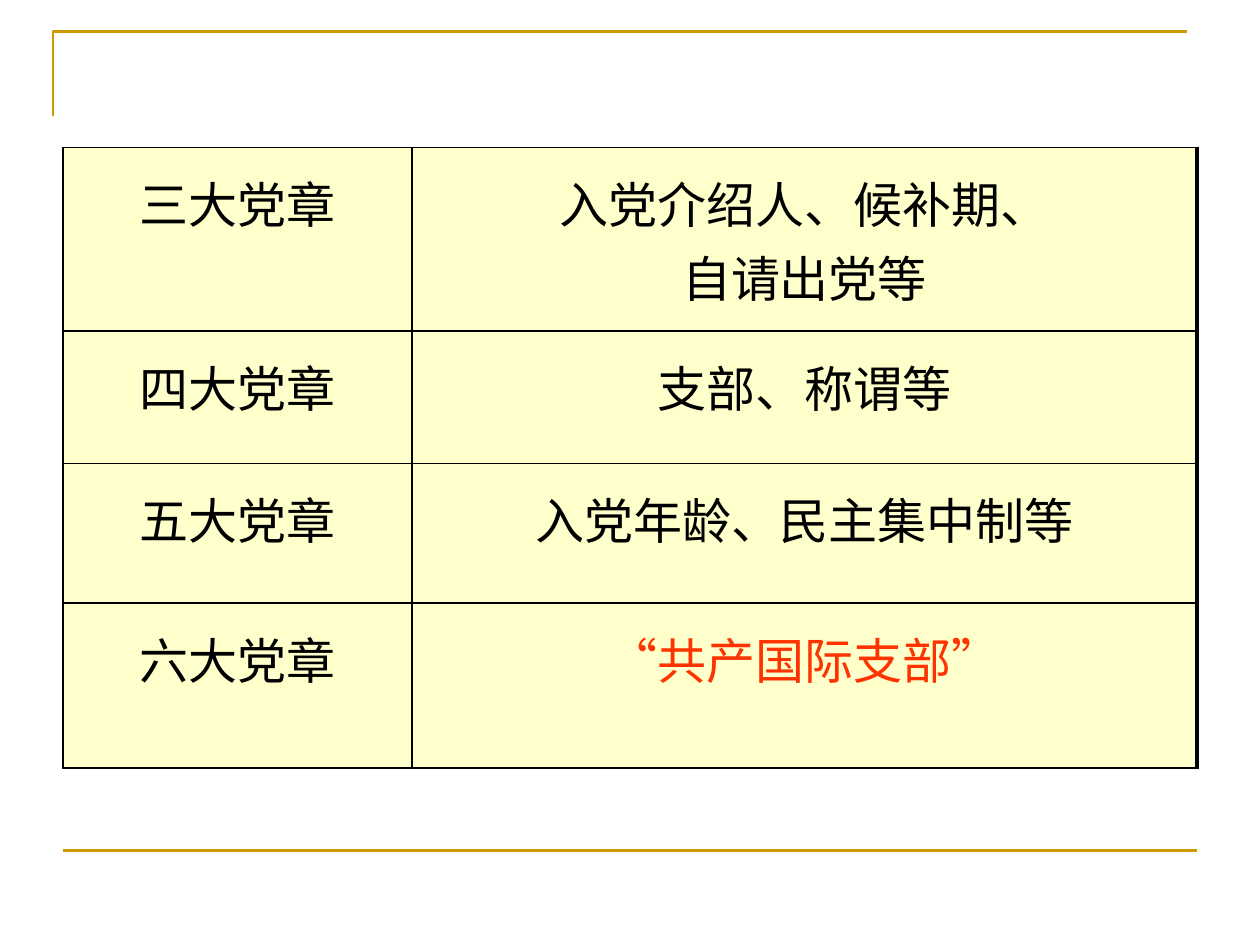
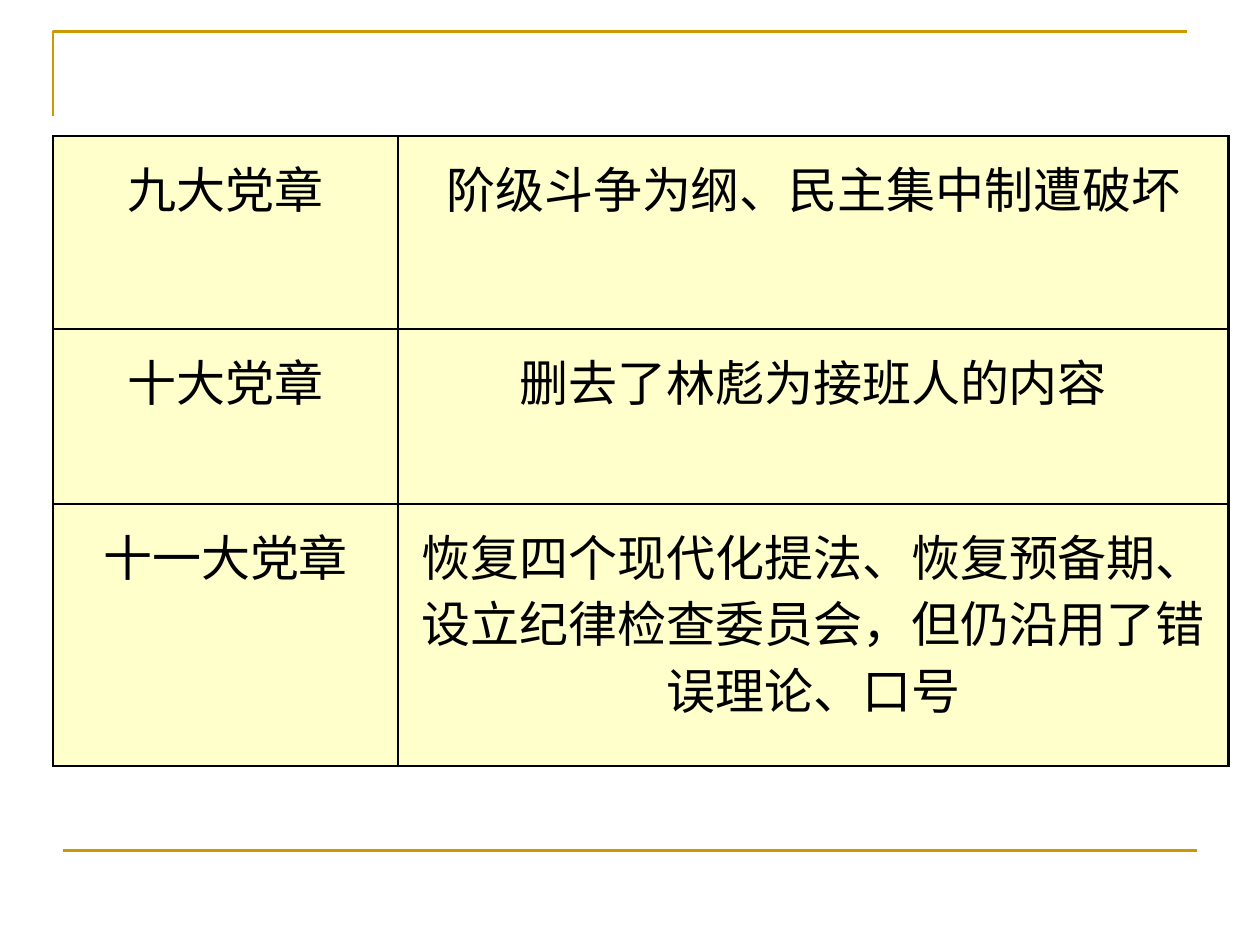
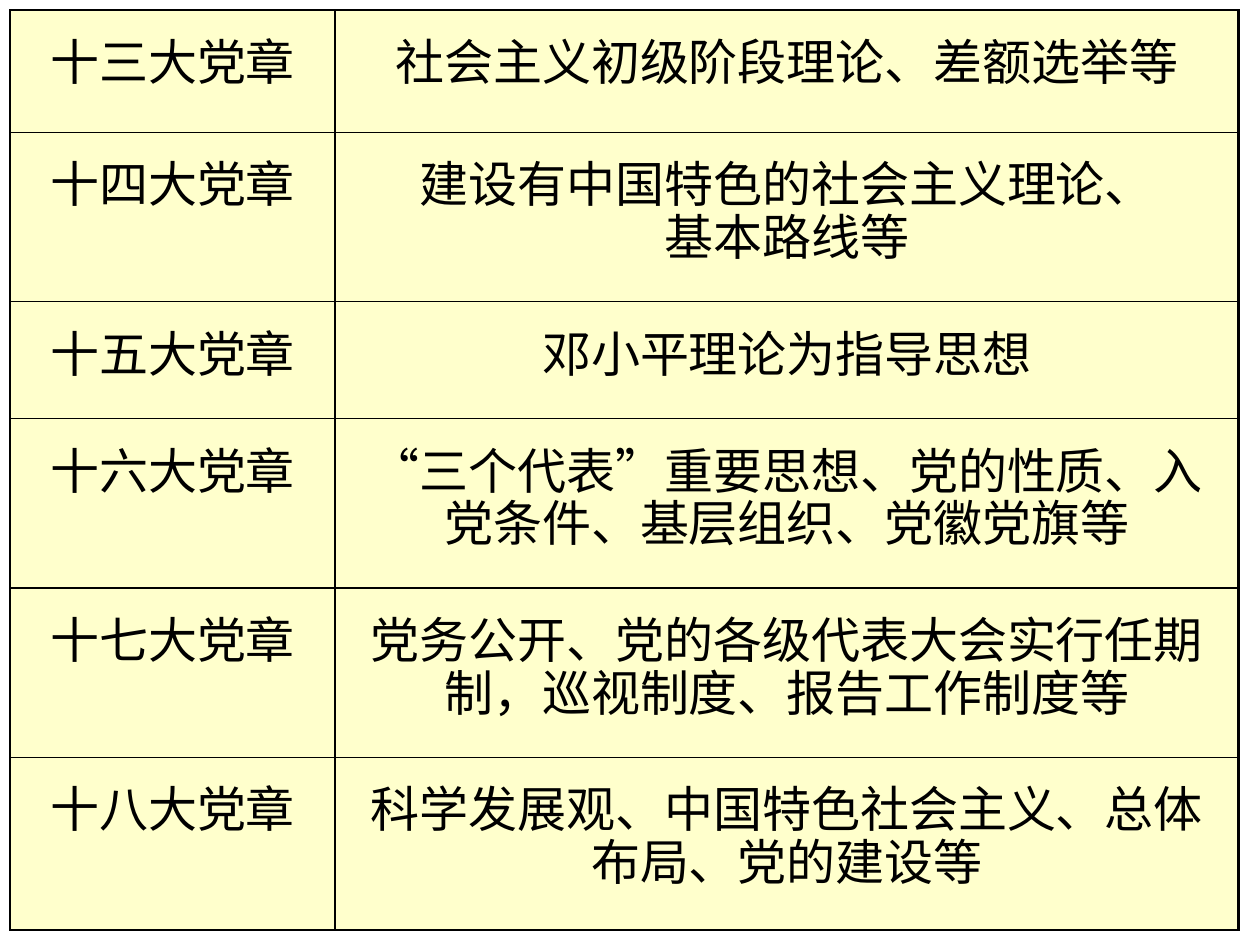
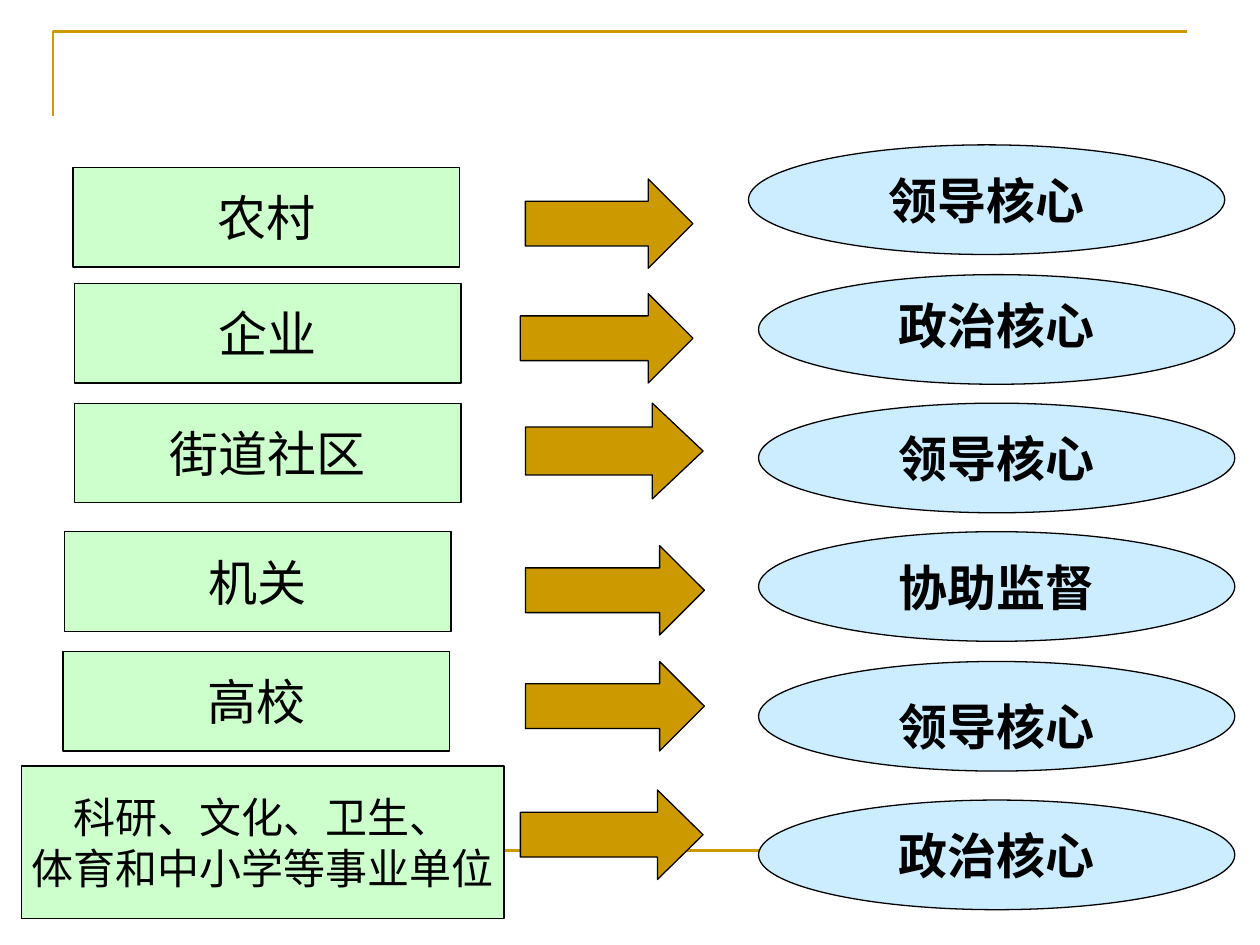
from dataclasses import dataclass

from lxml import etree
from pptx import Presentation
from pptx.dml.color import RGBColor
from pptx.enum.shapes import MSO_CONNECTOR, MSO_SHAPE
from pptx.enum.text import MSO_ANCHOR, PP_ALIGN
from pptx.oxml.ns import qn
from pptx.util import Inches, Pt

CENTER = PP_ALIGN.CENTER
MIDDLE = MSO_ANCHOR.MIDDLE
RECT = MSO_SHAPE.RECTANGLE
OVAL = MSO_SHAPE.OVAL
ARROW = MSO_SHAPE.RIGHT_ARROW
STRAIGHT = MSO_CONNECTOR.STRAIGHT


@dataclass(frozen=True)
class Theme:
    gold: RGBColor = RGBColor.from_string("CC9900")
    cream: RGBColor = RGBColor.from_string("FFFFCC")
    green: RGBColor = RGBColor.from_string("CCFFCC")
    blue: RGBColor = RGBColor.from_string("CCECFF")
    black: RGBColor = RGBColor.from_string("000000")
    red: RGBColor = RGBColor.from_string("FF3300")
    cjk: str = "Noto Sans CJK SC"
    latin: str = "Times New Roman"
    body: int = 28
    small: int = 24
    rule: float = 1.5
    outline: float = 0.75
    border: float = 1
    edge: float = 2.25


T = Theme()


def style_text(tf, font, size, color=T.black, bold=False):
    for p in tf.paragraphs:
        p.alignment = CENTER
        p.font.name = font
        p.font.size = Pt(size)
        p.font.bold = bold
        p.font.color.rgb = color
        latin = p._p.pPr.find(qn("a:defRPr")).find(qn("a:latin"))
        ea = etree.Element(qn("a:ea"), typeface=T.cjk)
        latin.addnext(ea)


def add_block(s, kind, box, fill):
    sp = s.shapes.add_shape(kind, *map(Inches, box))
    sp.shadow.inherit = False
    sp.fill.solid()
    sp.fill.fore_color.rgb = fill
    sp.line.color.rgb = T.black
    sp.line.width = Pt(T.outline)
    return sp


TABLES = [
    dict(
        at=(0.5, 1.17), cols=(2.77, 6.23), inset_pt=11.3, before=1.4, spacing=None,
        rows=[
            (1.45, "三大党章", "入党介绍人、候补期、\n自请出党等"),
            (1.05, "四大党章", "支部、称谓等"),
            (1.11, "五大党章", "入党年龄、民主集中制等"),
            (1.31, "六大党章", "“共产国际支部”"),
        ],
    ),
    dict(
        at=(0.42, 1.08), cols=(2.74, 6.59), inset_pt=11.5, before=0, spacing=38,
        rows=[
            (1.53, "九大党章", "阶级斗争为纲、民主集中制遭破坏"),
            (1.39, "十大党章", "删去了林彪为接班人的内容"),
            (2.08, "十一大党章",
             "恢复四个现代化提法、恢复预备期、设立纪律检查委员会，但仍沿用了错误理论、口号"),
        ],
    ),
    dict(
        at=(0.08, 0.08), cols=(2.58, 7.17), inset_pt=18.4, before=0, spacing=30,
        rows=[
            (0.97, "十三大党章", "社会主义初级阶段理论、差额选举等"),
            (1.3, "十四大党章", "建设有中国特色的社会主义理论、\n基本路线等"),
            (0.9, "十五大党章", "邓小平理论为指导思想"),
            (1.3, "十六大党章", "“三个代表”重要思想、党的性质、入党条件、基层组织、党徽党旗等"),
            (1.3, "十七大党章", "党务公开、党的各级代表大会实行任期制，巡视制度、报告工作制度等"),
            (1.37, "十八大党章", "科学发展观、中国特色社会主义、总体布局、党的建设等"),
        ],
    ),
]
HIGHLIGHT = "“共产国际支部”"

BOX_SIZE = (3.07, 0.79)
WIDE_BOX_SIZE = (3.83, 1.21)
OVAL_SIZE = (3.78, 0.87)
ROLES = [
    ("农村", (0.58, 1.33), BOX_SIZE, T.body,
     (4.17, 1.42, 1.33, 0.71), 0.5, "领导核心", (5.94, 1.15), (0.05, 0.05)),
    ("企业", (0.59, 2.25), BOX_SIZE, T.body,
     (4.13, 2.33, 1.37, 0.71), 0.5, "政治核心", (6.02, 2.18), (0, 0.07)),
    ("街道社区", (0.59, 3.2), BOX_SIZE, T.body,
     (4.17, 3.2, 1.41, 0.76), 0.53, "领导核心", (6.02, 3.2), (0.05, 0.05)),
    ("机关", (0.51, 4.22), BOX_SIZE, T.body,
     (4.17, 4.33, 1.42, 0.71), 0.5, "协助监督", (6.02, 4.22), (0.05, 0.05)),
    ("高校", (0.5, 5.17), BOX_SIZE, T.body,
     (4.17, 5.25, 1.42, 0.71), 0.5, "领导核心", (6.02, 5.25), (0.15, 0)),
    ("科研、文化、卫生、\n体育和中小学等事业单位", (0.17, 6.08), WIDE_BOX_SIZE, T.small,
     (4.13, 6.27, 1.45, 0.71), 0.51, "政治核心", (6.02, 6.35), (0.05, 0.05)),
]

prs = Presentation()
prs.slide_width = Inches(10)
prs.slide_height = Inches(7.5)
slides = [prs.slides.add_slide(prs.slide_layouts[6]) for _ in range(4)]

for s in slides:
    builder = s.shapes.build_freeform(Inches(0.42), Inches(0.92))
    builder.add_line_segments(
        [(Inches(0.42), Inches(0.25)), (Inches(9.42), Inches(0.25))], close=False)
    corner = builder.convert_to_shape()
    corner.shadow.inherit = False
    corner.fill.background()
    footer = s.shapes.add_connector(
        STRAIGHT, Inches(0.5), Inches(6.75), Inches(9.5), Inches(6.75))
    etree.SubElement(footer._element.spPr, qn("a:effectLst"))
    for rule in (corner, footer):
        rule.line.color.rgb = T.gold
        rule.line.width = Pt(T.rule)

for s, data in zip(slides, TABLES):
    rows, cols = data["rows"], data["cols"]
    width, height = sum(cols), sum(row[0] for row in rows)
    table = s.shapes.add_table(
        len(rows), len(cols), *map(Inches, (*data["at"], width, height))).table
    table.first_row = False
    table.horz_banding = False
    for i, col_width in enumerate(cols):
        table.columns[i].width = Inches(col_width)
    for i, (row_height, *texts) in enumerate(rows):
        table.rows[i].height = Inches(row_height)
        for j, text in enumerate(texts):
            cell = table.cell(i, j)
            cell.text = text
            cell.margin_left = cell.margin_right = Inches(0.1)
            cell.margin_top = cell.margin_bottom = Pt(data["inset_pt"])
            tcPr = cell._tc.get_or_add_tcPr()
            for side in ("lnL", "lnR", "lnT", "lnB"):
                weight = T.edge if side == "lnR" and j == len(cols) - 1 else T.border
                ln = etree.SubElement(tcPr, qn(f"a:{side}"), w=str(Pt(weight)))
                fill = etree.SubElement(ln, qn("a:solidFill"))
                etree.SubElement(fill, qn("a:srgbClr"), val=str(T.black))
            cell.fill.solid()
            cell.fill.fore_color.rgb = T.cream
            color = T.red if text == HIGHLIGHT else T.black
            style_text(cell.text_frame, T.cjk, T.body, color)
            for p in cell.text_frame.paragraphs:
                p.space_before = Pt(data["before"])
                if data["spacing"]:
                    p.line_spacing = Pt(data["spacing"])

s = slides[3]
for unit, box_at, box_size, size, arrow_box, head, role, oval_at, insets in ROLES:
    box = add_block(s, RECT, (*box_at, *box_size), T.green)
    arrow = add_block(s, ARROW, arrow_box, T.gold)
    arrow.adjustments[1] = head
    oval = add_block(s, OVAL, (*oval_at, *OVAL_SIZE), T.blue)
    oval.text_frame.margin_top, oval.text_frame.margin_bottom = map(Inches, insets)
    for sp, text, points, bold in ((box, unit, size, False), (oval, role, T.body, True)):
        tf = sp.text_frame
        tf.text = text
        tf.word_wrap = False
        tf.vertical_anchor = MIDDLE
        style_text(tf, T.latin, points, bold=bold)

prs.save("out.pptx")
